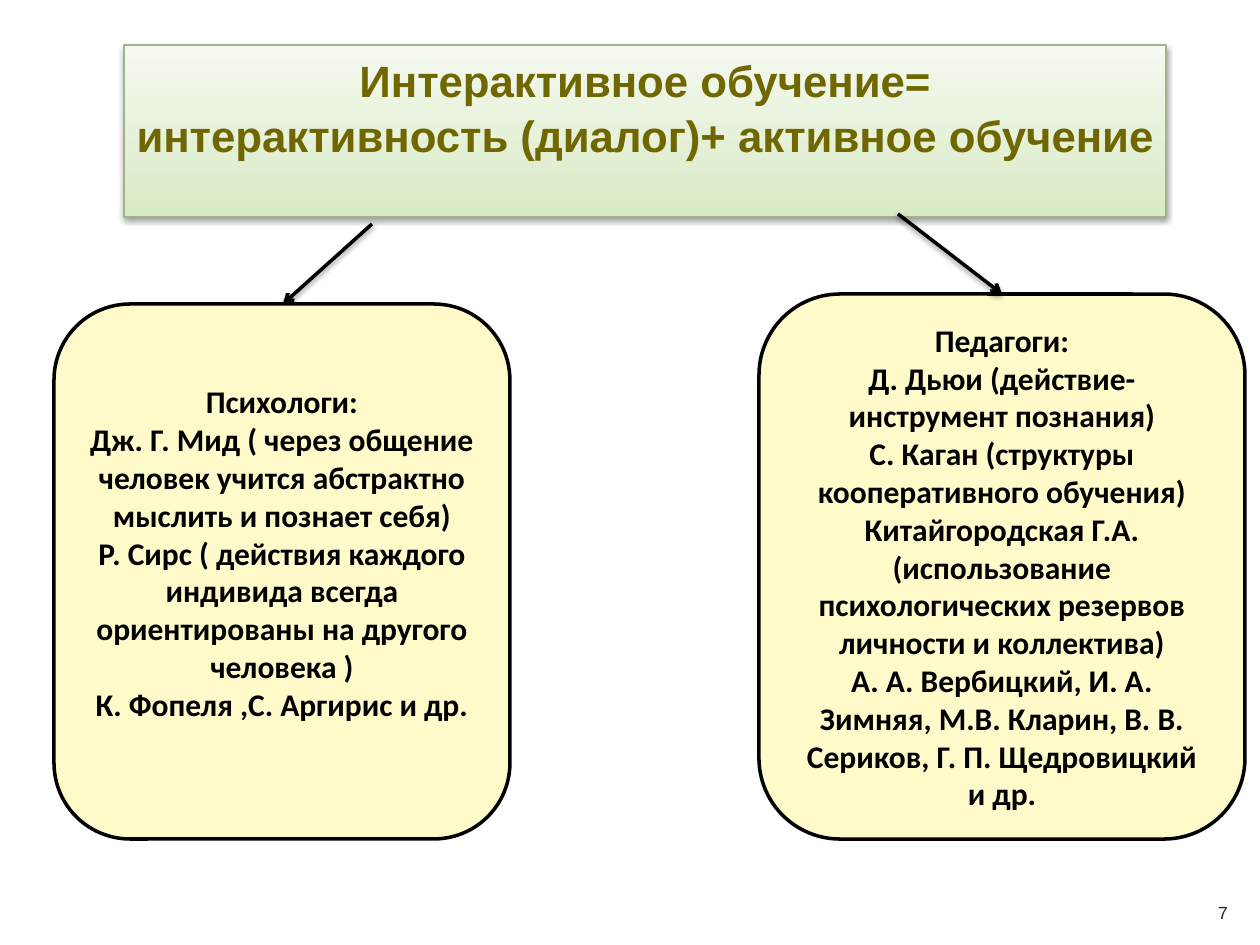
from lxml.etree import SubElement
from pptx import Presentation
from pptx.dml.color import RGBColor
from pptx.enum.shapes import MSO_CONNECTOR, MSO_SHAPE
from pptx.enum.text import MSO_ANCHOR, MSO_AUTO_SIZE, PP_ALIGN
from pptx.oxml.ns import qn
from pptx.util import Emu, Pt

EMU_PER_PX = 914400 / 126
COLORS = {
    "title": "706702",
    "title_top": "F4FAEF",
    "title_bottom": "D9EAC6",
    "title_line": "A1B28E",
    "box": "FEFAC9",
    "black": "000000",
    "number": "262626",
}
PSYCHOLOGISTS = [
    "Психологи:",
    "Дж. Г. Мид ( через общение человек учится абстрактно мыслить и познает себя)",
    "Р. Сирс ( действия каждого индивида всегда ориентированы на другого человека )",
    "К. Фопеля ,С. Аргирис и др.",
]
EDUCATORS = [
    "Педагоги:",
    "Д. Дьюи (действие-инструмент познания)",
    "С. Каган (структуры кооперативного обучения)",
    "Китайгородская Г.А. (использование психологических резервов личности и коллектива)",
    "А. А. Вербицкий, И. А. Зимняя, М.В. Кларин, В. В. Сериков, Г. П. Щедровицкий и др.",
]


def px(value):
    return Emu(round(value * EMU_PER_PX))


def color(name):
    return RGBColor.from_string(COLORS[name])


def set_line(line, name, width):
    line.color.rgb = color(name)
    line.width = Pt(width)


def add_shadow(shape):
    effects = SubElement(shape._element.spPr, qn("a:effectLst"))
    shadow = SubElement(effects, qn("a:outerShdw"), blurRad="40000",
                        dist="20000", dir="5400000", rotWithShape="0")
    black = SubElement(shadow, qn("a:srgbClr"), val=COLORS["black"])
    SubElement(black, qn("a:alpha"), val="38000")


def write_text(shape, lines, font, size, name, bold, anchor):
    text_frame = shape.text_frame
    text_frame.text = "\n".join(lines)
    text_frame.word_wrap = True
    text_frame.auto_size = MSO_AUTO_SIZE.NONE
    text_frame.vertical_anchor = anchor
    for paragraph in text_frame.paragraphs:
        paragraph.alignment = PP_ALIGN.CENTER
        for run in paragraph.runs:
            run.font.name = font
            run.font.size = Pt(size)
            run.font.bold = bold
            run.font.color.rgb = color(name)
    return text_frame


def add_title(slide):
    title = slide.shapes.title
    title.left, title.top, title.width, title.height = map(px, (124, 45, 1042, 172))
    title.fill.gradient()
    title.fill.gradient_angle = 90
    for stop, name in zip(title.fill.gradient_stops, ("title_bottom", "title_top")):
        stop.color.rgb = color(name)
    set_line(title.line, "title_line", 0.75)
    add_shadow(title)
    text_frame = write_text(
        title,
        ["Интерактивное обучение=", "интерактивность (диалог)+ активное обучение"],
        "Arial", 25, "title", True, MSO_ANCHOR.TOP)
    text_frame.margin_left = text_frame.margin_right = 0
    for paragraph in text_frame.paragraphs:
        paragraph.line_spacing = 1.05


def add_box(slide, left, top, width, height, lines):
    box = slide.shapes.add_shape(
        MSO_SHAPE.ROUNDED_RECTANGLE, *map(px, (left, top, width, height)))
    box.shadow.inherit = False
    box.fill.solid()
    box.fill.fore_color.rgb = color("box")
    set_line(box.line, "black", 2)
    return write_text(box, lines, "Calibri", 18, "black", True, MSO_ANCHOR.MIDDLE)


def add_arrow(slide, *ends):
    arrow = slide.shapes.add_connector(MSO_CONNECTOR.STRAIGHT, *map(px, ends))
    set_line(arrow.line, "black", 2)
    line = arrow._element.spPr.find(qn("a:ln"))
    SubElement(line, qn("a:tailEnd"), type="arrow")
    add_shadow(arrow)


def add_slide_number(slide, number):
    box = slide.shapes.add_textbox(*map(px, (1191, 888, 64, 50)))
    write_text(box, [number], "Arial", 10, "number", False, MSO_ANCHOR.MIDDLE)


def main():
    presentation = Presentation()
    presentation.slide_width, presentation.slide_height = px(1260), px(945)
    slide = presentation.slides.add_slide(presentation.slide_layouts[5])
    add_title(slide)
    add_arrow(slide, 372, 224, 283, 304)
    psychologists = add_box(slide, 54, 304, 456, 535, PSYCHOLOGISTS)
    psychologists.margin_bottom = px(44)
    add_box(slide, 759, 294, 486, 545, EDUCATORS)
    add_arrow(slide, 898, 214, 1002, 294)
    add_slide_number(slide, "7")
    presentation.save("out.pptx")


if __name__ == "__main__":
    main()
